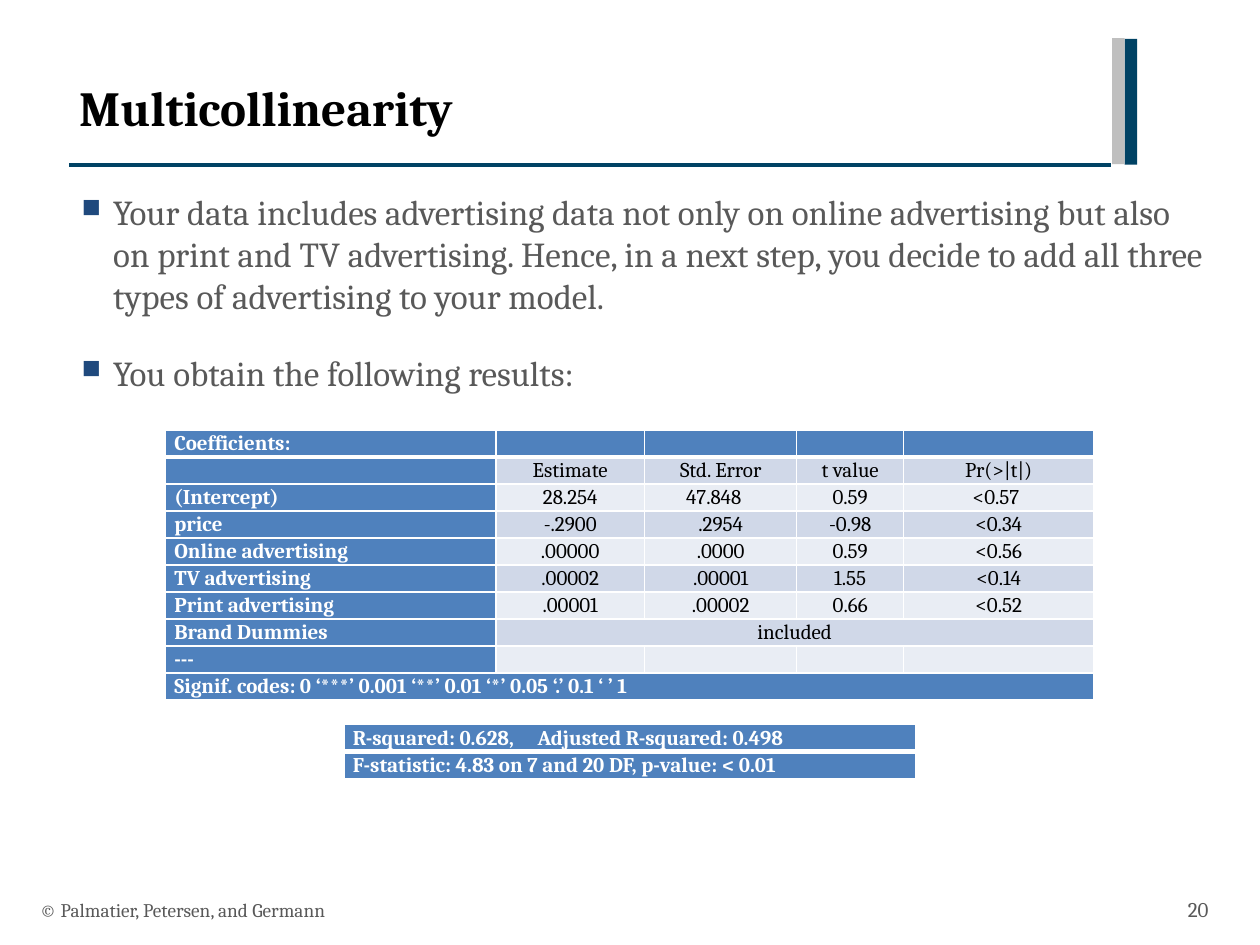
from lxml.etree import SubElement
from pptx import Presentation
from pptx.dml.color import RGBColor
from pptx.enum.shapes import MSO_CONNECTOR as Link, MSO_SHAPE as Shape
from pptx.enum.text import MSO_ANCHOR as Anchor, PP_ALIGN as Align
from pptx.oxml.ns import qn
from pptx.util import Pt

FACE = "Cambria"
NAVY, BLUE, GREY = "004264", "4F81BD", "595959"
WHITE, BLACK = "FFFFFF", "000000"
BANDS = ["E9EDF4", "D0D8E8"]
ROW = 14.75

POINTS = [
    "Your data includes advertising data not only on online advertising but "
    "also on print and TV advertising. Hence, in a next step, you decide to "
    "add all three types of advertising to your model.",
    "You obtain the following results:",
]
COEFS = [
    ["Coefficients:", "", "", "", ""],
    ["", "Estimate", "Std. Error", "t value", "Pr(>|t|)"],
    ["(Intercept)", "28.254", "47.848", "0.59", "<0.57"],
    ["price", "-.2900", ".2954", "-0.98", "<0.34"],
    ["Online advertising", ".00000", ".0000", "0.59", "<0.56"],
    ["TV advertising", ".00002", ".00001", "1.55", "<0.14"],
    ["Print advertising", ".00001", ".00002", "0.66", "<0.52"],
    ["Brand Dummies", "included", "", "", ""],
    ["---", "", "", "", ""],
    ["Signif. codes: 0 ‘***’ 0.001 ‘**’ 0.01 ‘*’ 0.05 ‘.’ 0.1 ‘ ’ 1", "", "", "", ""],
]
FITS = [
    ["R-squared: 0.628,\tAdjusted R-squared: 0.498"],
    ["F-statistic: 4.83 on 7 and 20 DF, p-value: < 0.01"],
]


def color(code):
    return RGBColor.from_string(code)


def style(para, size, code, bold=False, align=Align.LEFT):
    para.alignment = align
    font = para.font
    font.name, font.size, font.bold = FACE, Pt(size), bold
    font.color.rgb = color(code)


def add_text(slide, box, anchor=Anchor.TOP):
    frame = slide.shapes.add_textbox(*map(Pt, box)).text_frame
    frame.word_wrap = True
    frame.vertical_anchor = anchor
    return frame


def add_label(slide, box, text, size, code, anchor=Anchor.MIDDLE, **look):
    para = add_text(slide, box, anchor).paragraphs[0]
    para.text = text
    style(para, size, code, **look)


def add_bar(slide, box, code):
    bar = slide.shapes.add_shape(Shape.RECTANGLE, *map(Pt, box))
    bar.shadow.inherit = False
    bar.fill.solid()
    bar.fill.fore_color.rgb = color(code)
    bar.line.fill.background()


def add_head(slide, box):
    """Title over a rule, with a pair of bars at the right end."""
    left, top, width, height = box
    end, base = left + width, top + height
    rule = slide.shapes.add_connector(
        Link.STRAIGHT, *map(Pt, (left, base, end, base)))
    rule.line.color.rgb = color(NAVY)
    rule.line.width = Pt(2)
    SubElement(rule._element.spPr, qn("a:effectLst"))
    add_bar(slide, (end + 7.7, top + 0.4, 7.2, 72), NAVY)
    add_bar(slide, (end + 0.5, top, 7.2, 72), "BFBFBF")
    add_label(slide, (left - 1.4, top + 19.2, width, 63), "Multicollinearity",
              28, BLACK, Anchor.TOP, bold=True)


def add_points(slide, box):
    frame = add_text(slide, box)
    for i, text in enumerate(POINTS):
        para = frame.add_paragraph() if i else frame.paragraphs[0]
        para.text = text
        para.space_before = Pt(20 if i else 0)
        props = para._p.get_or_add_pPr()
        props.set("marL", str(Pt(18)))
        props.set("indent", str(Pt(-18)))
        tint = SubElement(props, qn("a:buClr"))
        SubElement(tint, qn("a:srgbClr"), val="1F497D")
        SubElement(props, qn("a:buSzPct"), val="75000")
        SubElement(props, qn("a:buChar"), char="■")
        style(para, 20, GREY)


def add_edges(cell, top, base):
    props = cell._tc.get_or_add_tcPr()
    sides = {"lnL": 1, "lnR": 1, "lnT": top, "lnB": base}
    for i, (side, width) in enumerate(sides.items()):
        edge = SubElement(props, qn("a:" + side), w=str(Pt(width)))
        fill = SubElement(edge, qn("a:solidFill"))
        SubElement(fill, qn("a:srgbClr"), val=WHITE)
        props.insert(i, edge)


def fill_cell(cell, text, fill, code, bold, align):
    cell.margin_left = cell.margin_right = Pt(5)
    cell.margin_top = cell.margin_bottom = 0
    cell.fill.solid()
    cell.fill.fore_color.rgb = color(fill)
    para = cell.text_frame.paragraphs[0]
    para.line_spacing = 1.07
    if "\t" in text:
        tabs = SubElement(para._p.get_or_add_pPr(), qn("a:tabLst"))
        SubElement(tabs, qn("a:tab"), pos=str(Pt(105.5)), algn="l")
    style(para, 12, code, bold, align)
    if text:
        para.text = text
    else:
        SubElement(para._p, qn("a:endParaRPr"), sz="1200")


def add_grid(slide, left, top, widths, data):
    """Table with a blue first row and first column, and banded values."""
    table = slide.shapes.add_table(
        len(data), len(widths), Pt(left), Pt(top),
        Pt(sum(widths)), Pt(ROW * len(data))).table
    table.first_row = table.horz_banding = False
    for col, width in zip(table.columns, widths):
        col.width = Pt(width)
    for r, line in enumerate(data):
        table.rows[r].height = Pt(ROW)
        for c, text in enumerate(line):
            cell = table.cell(r, c)
            if r == 0 or c == 0:
                fill_cell(cell, text, BLUE, WHITE, True, Align.LEFT)
            else:
                fill_cell(cell, text, BANDS[r % 2], BLACK, False, Align.CENTER)
            add_edges(cell, 3 if r == 1 else 1, 3 if r == 0 else 1)
    return table


def add_coefs(slide, left, top):
    table = add_grid(slide, left, top, [188.6, 85.1, 86.9, 61.1, 108.6], COEFS)
    table.cell(7, 1).merge(table.cell(7, 4))
    table.cell(9, 0).merge(table.cell(9, 4))
    table.cell(2, 2).margin_right = Pt(13)
    table.cell(2, 4).margin_right = Pt(8)


def add_foot(slide, box):
    left, top, width, height = box
    add_label(slide, (left, top, 482, height),
              "© Palmatier, Petersen, and Germann", 11, GREY)
    add_label(slide, (left + width - 44, top, 44, height), "20", 12, GREY,
              align=Align.RIGHT)


def main():
    deck = Presentation()
    deck.slide_width, deck.slide_height = Pt(720), Pt(540)
    slide = deck.slides.add_slide(deck.slide_layouts[6])
    add_head(slide, (39.6, 21.8, 595.4, 72.5))
    add_points(slide, (39.6, 105.1, 658, 389.5))
    add_foot(slide, (15.8, 505.4, 681.9, 28.8))
    add_coefs(slide, 94.7, 245.7)
    add_grid(slide, 196.7, 414, [326.6], FITS)
    deck.save("out.pptx")


if __name__ == "__main__":
    main()
